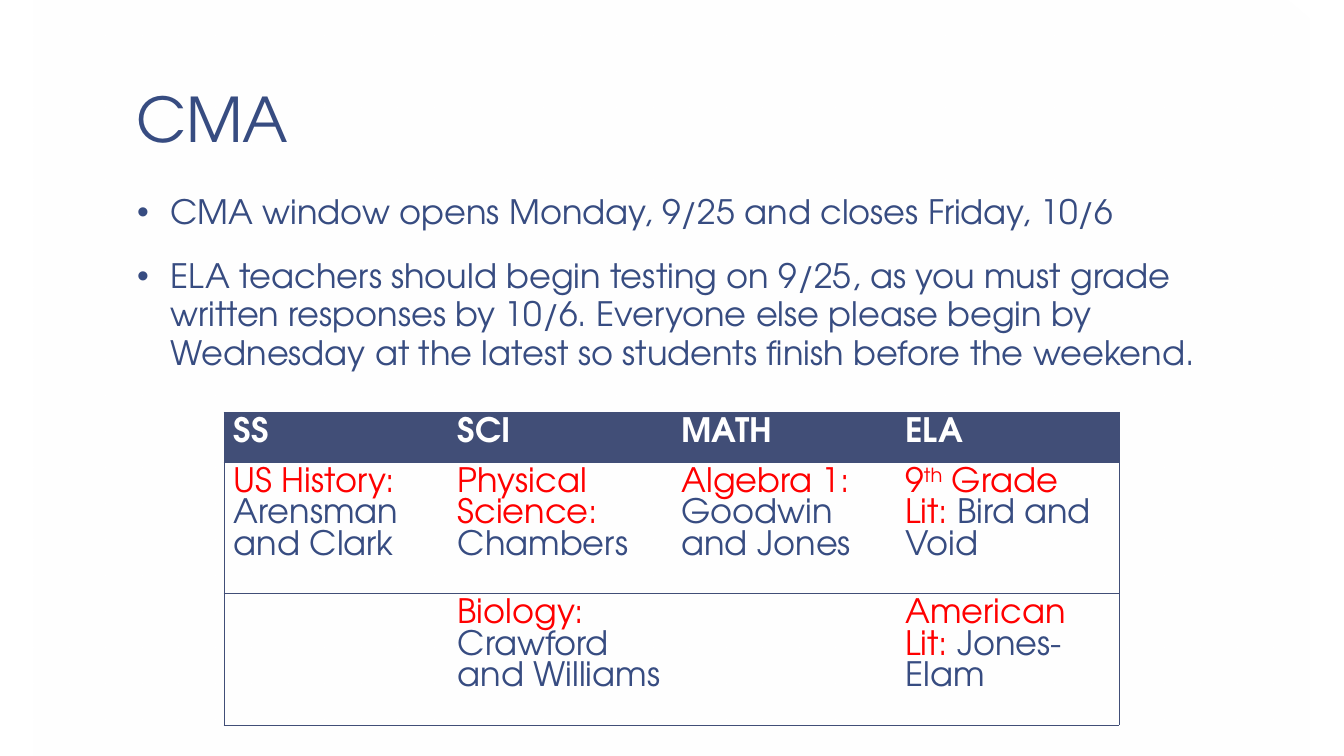
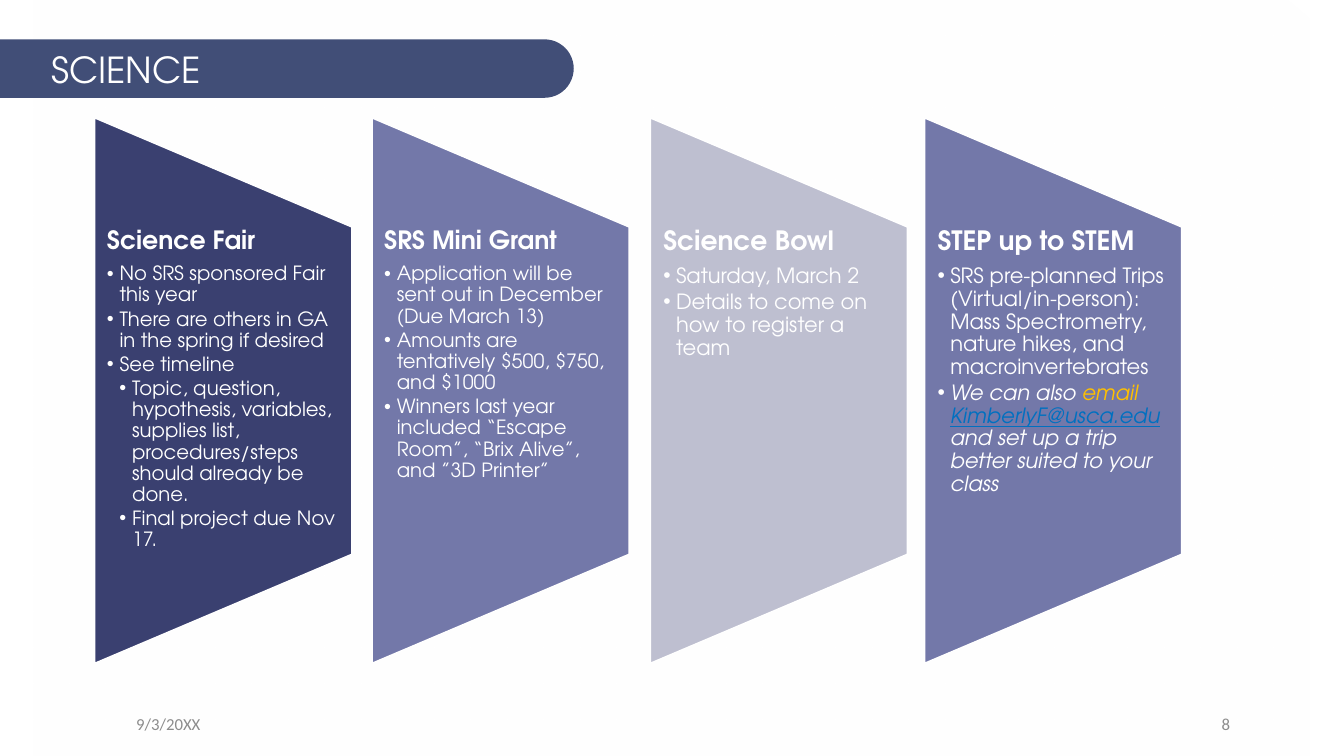
from pptx import Presentation
from pptx.dml.color import RGBColor
from pptx.enum import shapes, text
from pptx.oxml import ns
from pptx.util import Inches, Pt
from lxml import etree

NAVY = RGBColor(0x37, 0x4C, 0x81)
BAND = RGBColor(0x41, 0x4E, 0x77)
INDIGO = RGBColor(0x3A, 0x40, 0x70)
VIOLET = RGBColor(0x73, 0x78, 0xA9)
LAVENDER = RGBColor(0xBE, 0xBF, 0xD0)
WHITE = RGBColor(0xFF, 0xFF, 0xFF)
RED = RGBColor(0xFF, 0x00, 0x00)
GOLD = RGBColor(0xFF, 0xC0, 0x00)
LINK = RGBColor(0x00, 0x70, 0xC0)
GREY = RGBColor(0x8C, 0x8C, 0x8C)
FONT, FOOTER_FONT = "TeX Gyre Adventor", "Calibri"
INSET = (0.13, 0.07)

# Content: a text is a list of runs, a run is a string or (string, format)
CMA_POINTS = [
    "CMA window opens Monday, 9/25 and closes Friday, 10/6",
    "ELA teachers should begin testing on 9/25, as you must grade written responses by 10/6. "
    "Everyone else please begin by Wednesday at the latest so students finish before the weekend.",
]
SUBJECTS = ["SS", "SCI", "MATH", "ELA"]
COURSE = {"color": RED}
TEACHERS = [
    [
        [("US History: ", COURSE), "Arensman and Clark"],
        [("Physical Science: ", COURSE), "Chambers"],
        [("Algebra 1: ", COURSE), "Goodwin and Jones"],
        [("9", COURSE), ("th", {"color": RED, "raised": True}), (" Grade Lit: ", COURSE),
         "Bird and Void"],
    ],
    [
        [],
        [("Biology: ", COURSE), "Crawford and Williams"],
        [],
        [("American Lit: ", COURSE), "Jones-Elam"],
    ],
]
# Each point is (level, runs)
PROGRAMS = [
    {"title": "Science Fair", "left": 0.94, "color": INDIGO, "size": 14, "inset": 0.12, "points": [
        (1, ["No SRS sponsored Fair this year"]),
        (1, ["There are others in GA in the spring if desired"]),
        (1, ["See timeline"]),
        (2, ["Topic, question, hypothesis, variables, supplies list, "
             "procedures/steps should already be done."]),
        (2, ["Final project due Nov 17."])]},
    {"title": "SRS Mini Grant", "left": 3.69, "color": VIOLET, "size": 14, "inset": 0.12, "points": [
        (1, ["Application will be sent out in December (Due March 13)"]),
        (1, ["Amounts are tentatively $500, $750, and $1000"]),
        (1, ["Winners last year included “Escape Room”, “Brix Alive”, and ”3D Printer”"])]},
    {"title": "Science Bowl", "left": 6.45, "color": LAVENDER, "size": 15, "inset": 0.13, "points": [
        (1, ["Saturday, March 2"]),
        (1, ["Details to come on how to register a team"])]},
    {"title": "STEP up to STEM", "left": 9.17, "color": VIOLET, "size": 15, "inset": 0.13, "points": [
        (1, ["SRS pre-planned Trips (Virtual/in-person): Mass Spectrometry, "
             "nature hikes, and macroinvertebrates"]),
        (1, [("We can also ", {"italic": True}),
             ("email ", {"italic": True, "color": GOLD}),
             ("KimberlyF@usca.edu", {"italic": True, "color": LINK, "underline": True}),
             (" and set up a trip better suited to your class", {"italic": True})])]},
]


def write(frame, runs, size=24, color=NAVY, font=FONT, bold=False, spacing=None,
          before=None, after=None, align=None, bullet=None):
    """Add one paragraph; bullet is (left margin, hanging indent) in inches."""
    first = frame.paragraphs[0]
    para = frame.add_paragraph() if first.runs else first
    if bullet:
        margin, hang = bullet
        props = para._p.get_or_add_pPr()
        props.set("marL", str(Inches(margin)))
        props.set("indent", str(-Inches(hang)))
        etree.SubElement(props, ns.qn("a:buFont")).set("typeface", "Arial")
        etree.SubElement(props, ns.qn("a:buChar")).set("char", "•")
    para.alignment = align
    para.line_spacing = spacing
    if before and para is not first:
        para.space_before = Pt(before)
    if after is not None:
        para.space_after = Pt(after)
    for item in runs:
        words, style = (item, {}) if isinstance(item, str) else item
        run = para.add_run()
        run.text = words
        run.font.name = font
        run.font.size = Pt(size)
        run.font.bold = bold
        run.font.italic = style.get("italic", False)
        run.font.underline = style.get("underline", False)
        run.font.color.rgb = style.get("color", color)
        if style.get("raised"):
            run._r.get_or_add_rPr().set("baseline", "30000")


def text_area(slide, left, top, width, height, inset=INSET, anchor=text.MSO_ANCHOR.TOP):
    frame = slide.shapes.add_textbox(*map(Inches, (left, top, width, height))).text_frame
    frame.word_wrap = True
    frame.vertical_anchor = anchor
    frame.margin_left = frame.margin_right = Inches(inset[0])
    frame.margin_top = frame.margin_bottom = Inches(inset[1])
    return frame


def add_backdrop(slide):
    """Add the white veil that lies behind the content of every slide."""
    veil = slide.shapes.add_shape(shapes.MSO_SHAPE.RECTANGLE,
                                  *map(Inches, (0.33, 0, 12.66, 7.5)))
    veil.shadow.inherit = False
    veil.line.fill.background()
    veil.fill.gradient()
    veil.fill.gradient_angle = 230
    for stop, alpha in zip(veil.fill.gradient_stops, (0, 55000)):
        stop.color.rgb = WHITE
    for tint, alpha in zip(veil._element.spPr.iter(ns.qn("a:srgbClr")), (0, 55000)):
        etree.SubElement(tint, ns.qn("a:alpha")).set("val", str(alpha))


def turned_shape(slide, kind, left, top, width, height, rotation, color):
    """Add a shape that fills the given area once it is turned a quarter."""
    x, y = left + (width - height) / 2, top + (height - width) / 2
    shape = slide.shapes.add_shape(kind, *map(Inches, (x, y, height, width)))
    shape.rotation = rotation
    shape.shadow.inherit = False
    shape.fill.solid()
    shape.fill.fore_color.rgb = color
    shape.line.fill.background()
    return shape


def set_borders(cell, visible):
    props = cell._tc.get_or_add_tcPr()
    for side in "LRTB":
        line = etree.SubElement(props, ns.qn(f"a:ln{side}"), w=str(Pt(0.5)))
        if side in visible:
            fill = etree.SubElement(line, ns.qn("a:solidFill"))
            etree.SubElement(fill, ns.qn("a:srgbClr")).set("val", str(BAND))
        else:
            etree.SubElement(line, ns.qn("a:noFill"))


def add_subject_table(slide):
    row_heights = [0.41, 1.03, 1.03]
    column_width = 2.22
    rows = [[[subject] for subject in SUBJECTS]] + TEACHERS
    count = len(SUBJECTS)
    table = slide.shapes.add_table(
        len(rows), count, Inches(2.22), Inches(4.09),
        Inches(column_width * count), Inches(sum(row_heights))).table
    table.first_row = table.horz_banding = False
    for column in table.columns:
        column.width = Inches(column_width)
    for r, row in enumerate(rows):
        table.rows[r].height = Inches(row_heights[r])
        header = r == 0
        for c, runs in enumerate(row):
            cell = table.cell(r, c)
            sides = "TB" + ("L" if c == 0 else "") + ("R" if c == count - 1 else "")
            set_borders(cell, sides)
            if header:
                cell.fill.solid()
                cell.fill.fore_color.rgb = BAND
            else:
                cell.fill.background()
            cell.margin_left = cell.margin_right = Inches(0.1)
            cell.margin_top = cell.margin_bottom = Inches(0.05)
            write(cell.text_frame, runs, color=WHITE if header else NAVY, bold=header)


def add_program(slide, program):
    left, width, size = program["left"], 2.55, program["size"]
    panel = turned_shape(slide, shapes.MSO_SHAPE.FLOWCHART_MANUAL_OPERATION,
                         left, 1.17, width, 5.41, 270, program["color"])
    panel.line.color.rgb = WHITE
    panel.line.width = Pt(1)
    frame = text_area(slide, left, 2.26, width, 3.24, inset=(program["inset"], 0))
    heading_size = size + 4
    write(frame, [program["title"]], size=heading_size, color=WHITE, bold=True,
          spacing=0.9, after=round(heading_size * 0.35, 1))
    for level, runs in program["points"]:
        write(frame, runs, size=size, color=WHITE, spacing=0.9,
              after=round(size * 0.15, 1), bullet=(level * 0.125, 0.125))


def build_cma(slide):
    title = text_area(slide, 1.22, 0.08, 11.11, 1.53, anchor=text.MSO_ANCHOR.BOTTOM)
    write(title, ["CMA"], size=44, spacing=0.85)
    body = text_area(slide, 1.22, 1.85, 11.11, 2.1)
    for point in CMA_POINTS:
        write(body, [point], spacing=0.95, before=18.7, bullet=(0.34, 0.33))
    add_subject_table(slide)


def build_science(slide):
    # Footer
    for words, left, width, align in (("9/3/20XX", 1.22, 3, text.PP_ALIGN.LEFT),
                                      ("8", 11.12, 1.21, text.PP_ALIGN.RIGHT)):
        footer = text_area(slide, left, 7, width, 0.35, anchor=text.MSO_ANCHOR.BOTTOM)
        write(footer, [words], size=12, color=GREY, font=FOOTER_FONT, align=align)
    # Program panels
    for program in PROGRAMS:
        add_program(slide, program)
    # Title band
    band = turned_shape(slide, shapes.MSO_SHAPE.ROUND_2_SAME_RECTANGLE,
                        0, 0.39, 5.69, 0.58, 90, BAND)
    band.adjustments[0] = 0.5
    title = text_area(slide, 0.51, 0.46, 4.69, 0.44, inset=(0, 0.01))
    write(title, ["SCIENCE"], size=25.6, color=WHITE)


def main():
    deck = Presentation()
    deck.slide_width, deck.slide_height = Inches(13.33), Inches(7.5)
    blank = deck.slide_layouts[6]
    for build in (build_cma, build_science):
        slide = deck.slides.add_slide(blank)
        add_backdrop(slide)
        build(slide)
    deck.save("out.pptx")


if __name__ == "__main__":
    main()
